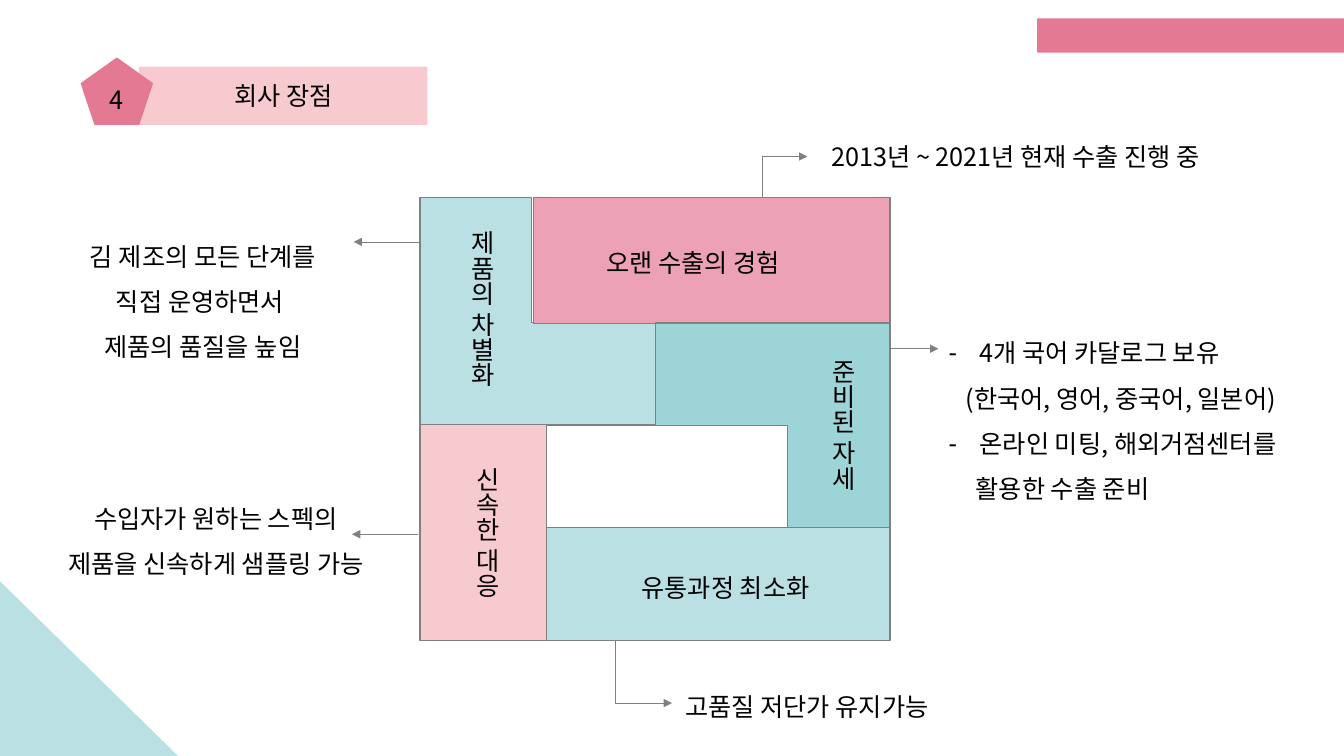
from dataclasses import dataclass

from lxml import etree
from pptx import Presentation
from pptx.dml.color import RGBColor
from pptx.enum.shapes import MSO_CONNECTOR, MSO_SHAPE
from pptx.enum.text import MSO_ANCHOR, MSO_AUTO_SIZE, PP_ALIGN
from pptx.oxml.ns import qn
from pptx.util import Inches, Pt

RECTANGLE, CORNER = MSO_SHAPE.RECTANGLE, MSO_SHAPE.CORNER
TRIANGLE, PENTAGON = MSO_SHAPE.RIGHT_TRIANGLE, MSO_SHAPE.REGULAR_PENTAGON
STRAIGHT, ELBOW = MSO_CONNECTOR.STRAIGHT, MSO_CONNECTOR.ELBOW
LEFT, CENTER = PP_ALIGN.LEFT, PP_ALIGN.CENTER
TOP, MIDDLE = MSO_ANCHOR.TOP, MSO_ANCHOR.MIDDLE
GROW, FIXED = MSO_AUTO_SIZE.SHAPE_TO_FIT_TEXT, MSO_AUTO_SIZE.NONE

WIDTH, HEIGHT = Inches(13.33), Inches(7.5)
COLUMNS, ROWS = 80, 45
FONT, SIZE = "Noto Sans CJK KR", 18
BLACK, GRAY = "000000", "808080"
ROSE, PINK, BLUSH = "E37992", "ECA2B4", "F7CACF"
AQUA, TEAL = "BAE0E3", "9DD4D7"


@dataclass
class Box:
    column: float
    row: float
    columns: float
    rows: float


@dataclass
class Block:
    box: Box
    fill: str
    kind: MSO_SHAPE = RECTANGLE
    outlined: bool = True
    rotation: int = 0
    arms: tuple[float, ...] = ()


@dataclass
class Label:
    box: Box
    lines: tuple[str, ...]
    vertical: bool = False
    align: PP_ALIGN = LEFT
    spacing: float = 1.0


@dataclass
class Arrow:
    start: tuple[float, float]
    end: tuple[float, float]
    kind: MSO_CONNECTOR = STRAIGHT
    bend: float = 0.5


@dataclass
class Item:
    text: str
    indent: float
    bullet: bool


DECORATIONS = [
    Block(Box(0, 34.6, 10.6, 10.4), AQUA, TRIANGLE, outlined=False),
    Block(Box(61.74, 1.1, 18.26, 2.04), ROSE, outlined=False),
]
PUZZLE = [
    Block(Box(25, 11.76, 14, 13.53), AQUA, CORNER, arms=(0.45, 0.49)),
    Block(Box(31.74, 11.76, 21.24, 7.48), PINK),
    Block(Box(25, 25.26, 7.54, 12.86), BLUSH),
    Block(Box(39, 19.22, 13.98, 12.18), TEAL, CORNER, rotation=180, arms=(0.5, 0.5)),
    Block(Box(32.54, 31.4, 20.44, 6.72), AQUA),
]
LABELS = [
    Label(Box(37.6, 33.8, 12.4, 2.4), ("유통과정 최소화",)),
    Label(Box(35.5, 14.4, 12.9, 2.4), ("오랜 수출의 경험",)),
    Label(Box(26.9, 13.15, 3, 10.8), ("제품의 차별화",), vertical=True),
    Label(Box(27.2, 27.2, 3, 9.2), ("신속한 대응",), vertical=True),
    Label(Box(48.4, 20.8, 3, 9.7), ("준비된 자세",), vertical=True),
    Label(Box(48.9, 8.1, 25.8, 2.4), ("2013년 ~ 2021년 현재 수출 진행 중",)),
    Label(Box(40.2, 40.85, 17.5, 2.4), ("고품질 저단가 유지가능",)),
    Label(Box(3.85, 13.15, 16.45, 8.45),
          ("김 제조의 모든 단계를", "직접 운영하면서 ", "제품의 품질을 높임"),
          align=CENTER, spacing=1.5),
    Label(Box(2.35, 28.75, 21, 6.05),
          ("수입자가 원하는 스펙의", "제품을 신속하게 샘플링 가능"),
          align=CENTER, spacing=1.5),
]
ARROWS = [
    Arrow((42.7, 11.76), (48.06, 9.32), ELBOW),
    Arrow((52.95, 20.76), (55.86, 20.76)),
    Arrow((36.6, 38.15), (40, 41.85), ELBOW, bend=0),
    Arrow((25, 14.4), (21.05, 14.4)),
    Arrow((24.9, 31.8), (20.95, 31.8)),
]
PREPARATION = [
    Item("4개 국어 카달로그 보유", 0.31, True),
    Item("(한국어, 영어, 중국어, 일본어)", 0.17, False),
    Item("온라인 미팅, 해외거점센터를", 0.31, True),
    Item("활용한 수출 준비", 0.27, False),
]


def across(columns: float) -> int:
    return round(WIDTH * columns / COLUMNS)


def down(rows: float) -> int:
    return round(HEIGHT * rows / ROWS)


def frame(box: Box) -> tuple[int, int, int, int]:
    return across(box.column), down(box.row), across(box.columns), down(box.rows)


def place(shape, box: Box) -> None:
    shape.left, shape.top, shape.width, shape.height = frame(box)


def paint(color_format, color: str) -> None:
    color_format.rgb = RGBColor.from_string(color)


def fill_solid(shape, color: str) -> None:
    shape.fill.solid()
    paint(shape.fill.fore_color, color)


def write(paragraph, text: str, align: PP_ALIGN = LEFT, spacing: float = 1.0) -> None:
    paragraph.alignment = align
    paragraph.line_spacing = spacing
    paragraph.space_before = Pt(0)
    run = paragraph.add_run()
    run.text = text
    run.font.size = Pt(SIZE)
    run.font.name = FONT
    paint(run.font.color, BLACK)
    etree.SubElement(run.font._element, qn("a:ea"), typeface=FONT)


def paragraphs(text_frame, count: int) -> list:
    return [text_frame.paragraphs[0]] + [text_frame.add_paragraph() for _ in range(count - 1)]


def draw_block(shapes, block: Block):
    shape = shapes.add_shape(block.kind, *frame(block.box))
    shape.shadow.inherit = False
    shape.rotation = block.rotation
    for index, arm in enumerate(block.arms):
        shape.adjustments[index] = arm
    fill_solid(shape, block.fill)
    if block.outlined:
        paint(shape.line.color, GRAY)
        shape.line.width = Pt(1)
    else:
        shape.line.fill.background()
    return shape


def draw_label(shapes, label: Label) -> None:
    text_frame = shapes.add_textbox(*frame(label.box)).text_frame
    text_frame.word_wrap = False
    text_frame.auto_size = GROW
    if label.vertical:
        text_frame._txBody.bodyPr.set("vert", "eaVert")
    for paragraph, line in zip(paragraphs(text_frame, len(label.lines)), label.lines):
        write(paragraph, line, label.align, label.spacing)


def draw_arrow(shapes, arrow: Arrow) -> None:
    (left, top), (right, bottom) = arrow.start, arrow.end
    connector = shapes.add_connector(
        arrow.kind, across(left), down(top), across(right), down(bottom))
    paint(connector.line.color, GRAY)
    connector.line.width = Pt(0.5)
    properties = connector._element.spPr
    etree.SubElement(properties.find(qn("a:ln")), qn("a:tailEnd"), type="triangle")
    etree.SubElement(properties, qn("a:effectLst"))
    if arrow.kind == ELBOW:
        guides = properties.find(qn("a:prstGeom")).find(qn("a:avLst"))
        etree.SubElement(guides, qn("a:gd"), name="adj1", fmla=f"val {round(arrow.bend * 100000)}")


def fill_title(title) -> None:
    place(title, Box(8.28, 3.96, 17.16, 3.48))
    fill_solid(title, BLUSH)
    title.text_frame.auto_size = FIXED
    title.text_frame.vertical_anchor = MIDDLE
    write(title.text_frame.paragraphs[0], "회사 장점", CENTER)


def fill_list(body, items: list[Item]) -> None:
    place(body, Box(55.86, 18.9, 23.46, 11.58))
    text_frame = body.text_frame
    text_frame.auto_size = FIXED
    text_frame.vertical_anchor = TOP
    for paragraph, item in zip(paragraphs(text_frame, len(items)), items):
        write(paragraph, item.text, spacing=1.5)
        properties = paragraph._p.get_or_add_pPr()
        indent = Inches(item.indent)
        properties.set("marL", str(indent if item.bullet else 0))
        properties.set("indent", str(-indent if item.bullet else indent))
        if item.bullet:
            etree.SubElement(properties, qn("a:buChar"), char="-")
        else:
            etree.SubElement(properties, qn("a:buNone"))


def main() -> None:
    deck = Presentation()
    deck.slide_width, deck.slide_height = WIDTH, HEIGHT
    slide = deck.slides.add_slide(deck.slide_layouts[1])
    fill_title(slide.shapes.title)
    fill_list(slide.placeholders[1], PREPARATION)
    for block in DECORATIONS + PUZZLE:
        draw_block(slide.shapes, block)
    for label in LABELS:
        draw_label(slide.shapes, label)
    for arrow in ARROWS:
        draw_arrow(slide.shapes, arrow)
    number = draw_block(slide.shapes, Block(Box(4.8, 3.42, 4.32, 4.02), ROSE, PENTAGON, outlined=False))
    number.text_frame.vertical_anchor = MIDDLE
    write(number.text_frame.paragraphs[0], "4", CENTER)
    deck.save("out.pptx")


if __name__ == "__main__":
    main()
